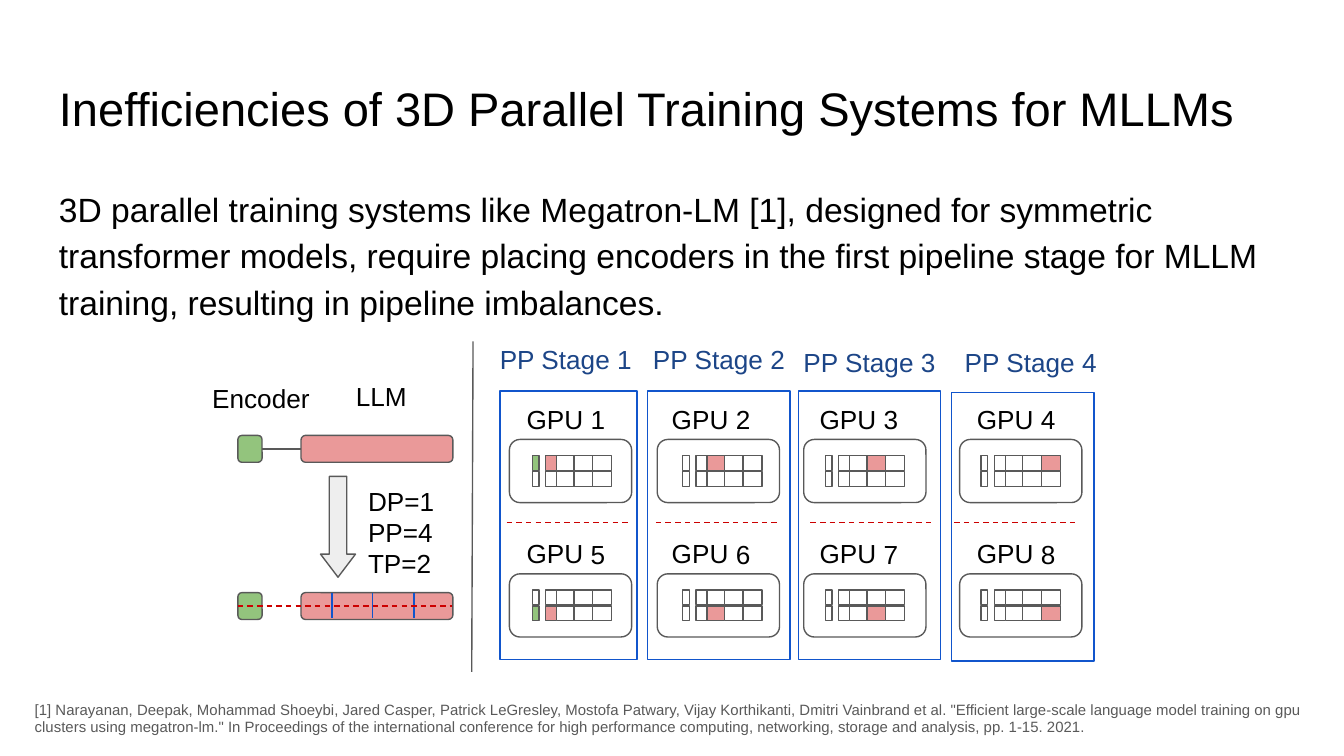
from dataclasses import dataclass

from lxml import etree
from pptx import Presentation
from pptx.dml.color import RGBColor
from pptx.enum.dml import MSO_LINE
from pptx.enum.shapes import MSO_CONNECTOR, MSO_SHAPE
from pptx.enum.text import MSO_ANCHOR
from pptx.oxml.ns import qn
from pptx.util import Inches, Pt

RECTANGLE = MSO_SHAPE.RECTANGLE
ROUNDED = MSO_SHAPE.ROUNDED_RECTANGLE
RIGHT_ARROW = MSO_SHAPE.RIGHT_ARROW
STRAIGHT = MSO_CONNECTOR.STRAIGHT
DASH = MSO_LINE.DASH
TOP = MSO_ANCHOR.TOP
MIDDLE = MSO_ANCHOR.MIDDLE

BLACK, WHITE, GRAY = "000000", "FFFFFF", "595959"
GREEN, PINK, RED = "93C47D", "EA9999", "CC0000"
BLUE, NAVY, LIGHT_GRAY = "1155CC", "1C4587", "EEEEEE"

TITLE = "Inefficiencies of 3D Parallel Training Systems for MLLMs"
BODY = (
    "3D parallel training systems like Megatron-LM [1], designed for symmetric "
    "transformer models, require placing encoders in the first pipeline stage "
    "for MLLM training, resulting in pipeline imbalances."
)
REFERENCE = (
    "[1] Narayanan, Deepak, Mohammad Shoeybi, Jared Casper, Patrick LeGresley, "
    "Mostofa Patwary, Vijay Korthikanti, Dmitri Vainbrand et al. "
    '"Efficient large-scale language model training on gpu clusters using '
    'megatron-lm." In Proceedings of the international conference for high '
    "performance computing, networking, storage and analysis, pp. 1-15. 2021."
)

CELL_OFFSETS = (0, 0.1, 0.18, 0.31, 0.45)
CELL_WIDTHS = (0.05, 0.08, 0.14, 0.14, 0.14)
CELL_HEIGHT = 0.11
CELL_PITCH = 0.12
GPU_PITCH = 1


@dataclass
class Stage:
    box: tuple
    heading: tuple
    card_left: float
    label_left: float
    cells_left: float
    divider_left: float
    active: dict


STAGES = (
    Stage((3.72, 2.91, 1.02, 2), (3.62, 2.55, 1.38, 0.25), 3.79, 3.82, 3.96, 3.77, {0: GREEN, 1: PINK}),
    Stage((4.82, 2.91, 1.06, 2), (4.76, 2.55, 1.38, 0.25), 4.89, 4.9, 5.08, 4.88, {2: PINK}),
    Stage((5.94, 2.91, 1.06, 2), (5.88, 2.57, 1.38, 0.25), 5.98, 6, 6.14, 6.03, {3: PINK}),
    Stage((7.08, 2.92, 1.06, 2), (7.08, 2.57, 1.2, 0.25), 7.14, 7.17, 7.3, 7.1, {4: PINK}),
)


def color(value):
    return RGBColor.from_string(value)


def add_box(slide, kind, box, fill=None, line=GRAY):
    shape = slide.shapes.add_shape(kind, *map(Inches, box))
    shape.shadow.inherit = False
    if fill:
        shape.fill.solid()
        shape.fill.fore_color.rgb = color(fill)
    else:
        shape.fill.background()
    shape.line.color.rgb = color(line)
    shape.line.width = Pt(0.75)
    return shape


def add_line(slide, start, end, line=GRAY, dash=None):
    connector = slide.shapes.add_connector(STRAIGHT, *map(Inches, start + end))
    connector.line.color.rgb = color(line)
    connector.line.width = Pt(0.75)
    if dash:
        connector.line.dash_style = dash
    etree.SubElement(connector.element.spPr, qn("a:effectLst"))


def add_text(slide, box, lines, size=14, font_color=BLACK, anchor=MIDDLE, rotation=0):
    shape = slide.shapes.add_textbox(*map(Inches, box))
    shape.rotation = rotation
    frame = shape.text_frame
    frame.word_wrap = True
    frame.vertical_anchor = anchor
    frame.margin_left = frame.margin_right = Inches(0.1)
    frame.margin_top = frame.margin_bottom = Inches(0.1)
    frame.text = "\n".join(lines)
    for paragraph in frame.paragraphs:
        paragraph.font.name = "Arial"
        paragraph.font.size = Pt(size)
        paragraph.font.color.rgb = color(font_color)
    return frame


def add_model(slide, left, top):
    add_box(slide, ROUNDED, (left + 0.47, top, 1.13, 0.2), PINK)
    add_box(slide, ROUNDED, (left, top, 0.18, 0.2), GREEN)


def add_partitioning(slide, left, top):
    add_text(slide, (left - 0.29, top - 0.58, 1.01, 0.61), ["Encoder"], rotation=0.2)
    add_text(slide, (left + 0.78, top - 0.6, 0.98, 0.61), ["LLM"], rotation=0.2)
    add_model(slide, left, top)
    add_line(slide, (left + 0.18, top + 0.1), (left + 0.47, top + 0.1))

    arrow = add_box(slide, RIGHT_ARROW, (left + 0.37, top + 0.55, 0.75, 0.26), LIGHT_GRAY)
    arrow.rotation = 90
    arrow.adjustments[1] = 0.66
    add_text(slide, (left + 0.87, top + 0.27, 0.83, 0.83), ["DP=1", "PP=4", "TP=2"], anchor=TOP)

    split_top = top + 1.17
    add_model(slide, left, split_top)
    for offset in (0.7, 1, 1.31):
        add_line(slide, (left + offset, split_top), (left + offset, split_top + 0.19), BLUE)
    add_line(slide, (left, split_top + 0.1), (left + 1.59, split_top + 0.1), RED, DASH)


def add_gpu(slide, stage, number, row):
    top = 2.94 + row * GPU_PITCH
    add_box(slide, ROUNDED, (stage.card_left, top + 0.33, 0.91, 0.47), WHITE)
    add_text(slide, (stage.label_left, top, 0.91, 0.36), [f"GPU {number}"], rotation=0.2)
    for column, (offset, width) in enumerate(zip(CELL_OFFSETS, CELL_WIDTHS)):
        for cell_row in range(2):
            fill = stage.active.get(column, WHITE) if cell_row == row else WHITE
            cell_top = top + 0.45 + cell_row * CELL_PITCH
            add_box(slide, RECTANGLE, (stage.cells_left + offset, cell_top, width, CELL_HEIGHT), fill)


def add_stage(slide, stage, number):
    add_box(slide, RECTANGLE, stage.box, line=BLUE)
    add_text(slide, stage.heading, [f"PP Stage {number}"], font_color=NAVY)
    for row in range(2):
        add_gpu(slide, stage, number + row * len(STAGES), row)
    add_line(slide, (stage.divider_left, 3.89), (stage.divider_left + 0.91, 3.89), RED, DASH)


def main():
    presentation = Presentation()
    presentation.slide_width = Inches(10)
    presentation.slide_height = Inches(10 * 9 / 16)
    slide = presentation.slides.add_slide(presentation.slide_layouts[6])

    add_text(slide, (0.34, 0.49, 9.32, 0.63), [TITLE], 25.2, anchor=TOP)
    body = add_text(slide, (0.34, 1.26, 9.17, 1.23), [BODY], 18, anchor=TOP)
    body.paragraphs[0].line_spacing = 1.15
    body.paragraphs[0].space_after = Pt(12)
    add_partitioning(slide, 1.77, 3.24)
    add_line(slide, (3.52, 2.54), (3.51, 5))
    for number, stage in enumerate(STAGES, 1):
        add_stage(slide, stage, number)
    add_text(slide, (0.16, 5.11, 9.81, 0.47), [REFERENCE], 8, GRAY, TOP)
    presentation.save("out.pptx")


if __name__ == "__main__":
    main()
